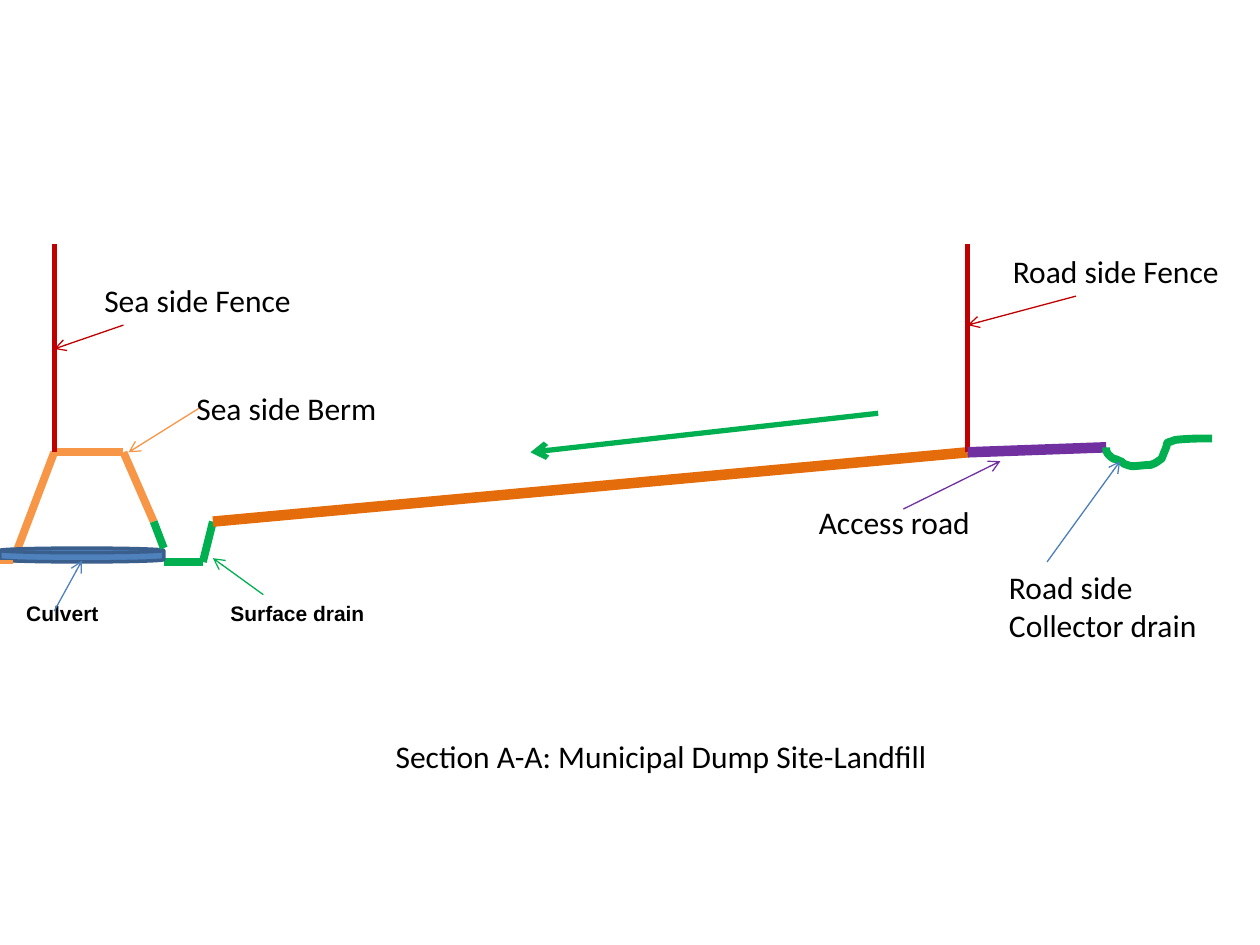
from lxml.etree import SubElement
from pptx import Presentation
from pptx.dml.color import RGBColor
from pptx.enum.shapes import MSO_CONNECTOR, MSO_SHAPE
from pptx.enum.text import MSO_ANCHOR, MSO_AUTO_SIZE, PP_ALIGN
from pptx.oxml.ns import qn
from pptx.util import Inches, Pt

# The slide is a grid of 100 columns by 75 rows
COLS, ROWS = 100, 75
CELL = Inches(0.1)

COLOR = {
    "berm": "F79646", "drain": "00B050", "fill": "E46C0A",
    "fence": "C00000", "road": "7030A0", "pipe": "4F81BD",
    "rim": "3A5F8C", "note": "4B7EBC", "text": "000000",
}

# Corners of the section, in columns and rows
SEA_TOP = (4.3, 35.9)
BERM_TOP = (9.8, 35.9)
BERM_TOE = (1, 44.6)
DRAIN_TOP = (12.2, 41.4)
DRAIN_BED = (16.1, 44.6)
SLOPE_TOE = (16.9, 41.4)
SLOPE_TOP = (76.8, 35.9)
ROAD_END = (87.8, 35.5)
FENCE_TOP = 19.4

# Bezier pieces of the collector drain: two handles and an end
BENDS = [
    ((87.8, 35.7), (87.8, 35.9), (88, 36.1)),
    ((88.5, 36.6), (88.4, 36.3), (88.9, 36.6)),
    ((89, 36.6), (89.1, 36.7), (89.2, 36.8)),
    ((89.4, 36.9), (89.8, 37), (89.8, 37)),
    ((90.3, 37), (90.8, 36.9), (91.3, 36.9)),
    ((91.4, 36.9), (91.5, 36.8), (91.6, 36.8)),
    ((91.8, 36.7), (92.2, 36.4), (92.2, 36.4)),
    ((92.2, 36.4), (92.6, 35.4), (92.6, 35.4)),
    ((92.6, 35.3), (92.6, 35.2), (92.7, 35.1)),
    ((92.9, 35.1), (93.2, 34.9), (93.4, 34.9)),
    ((94.6, 34.8), (95, 34.8), (96.2, 34.8)),
]


def cells(*nums):
    return [round(n * CELL) for n in nums]


def paint(line, color, width):
    line.color.rgb = RGBColor.from_string(COLOR[color])
    line.width = Pt(width)


def draw_line(slide, start, end, color, width=0.75, arrow=False):
    line = slide.shapes.add_connector(
        MSO_CONNECTOR.STRAIGHT, *cells(*start, *end))
    paint(line.line, color, width)
    props = line._element.spPr
    if arrow:
        SubElement(props.find(qn("a:ln")), qn("a:tailEnd"), type="arrow")
    SubElement(props, qn("a:effectLst"))


def put_text(shape, text, size=18, font="Calibri", bold=False, wrap=True):
    frame = shape.text_frame
    frame.text = text
    frame.word_wrap = wrap
    frame.auto_size = MSO_AUTO_SIZE.SHAPE_TO_FIT_TEXT
    frame.vertical_anchor = MSO_ANCHOR.TOP
    for para in frame.paragraphs:
        para.alignment = PP_ALIGN.LEFT
        face = para.font
        face.size, face.name, face.bold = Pt(size), font, bold
        face.color.rgb = RGBColor.from_string(COLOR["text"])


def add_label(slide, area, text, **style):
    put_text(slide.shapes.add_textbox(*cells(*area)), text, **style)


def set_title(slide, area, text):
    title = slide.shapes.title
    title.left, title.top, title.width, title.height = cells(*area)
    put_text(title, text)


def add_pipe(slide, area):
    pipe = slide.shapes.add_shape(
        MSO_SHAPE.FLOWCHART_MAGNETIC_DISK, *cells(*area))
    pipe.shadow.inherit = False
    pipe.fill.solid()
    pipe.fill.fore_color.rgb = RGBColor.from_string(COLOR["pipe"])
    paint(pipe.line, "rim", 2)


def bend(start, one, two, end, steps=6):
    for step in range(1, steps + 1):
        t = step / steps
        u = 1 - t
        yield tuple(u**3 * a + 3 * u * u * t * b + 3 * u * t * t * c + t**3 * d
                    for a, b, c, d in zip(start, one, two, end))


def add_curve(slide, start, bends, color, width):
    points, last = [], start
    for one, two, end in bends:
        points += bend(last, one, two, end)
        last = end
    form = slide.shapes.build_freeform(*cells(*start))
    form.add_line_segments([cells(*point) for point in points], close=False)
    curve = form.convert_to_shape()
    curve.shadow.inherit = False
    curve.fill.background()
    paint(curve.line, color, width)


def main():
    deck = Presentation()
    deck.slide_width, deck.slide_height = cells(COLS, ROWS)
    slide = deck.slides.add_slide(deck.slide_layouts[5])
    set_title(slide, (30.4, 58, 45.1, 4),
              "Section A-A: Municipal Dump Site-Landfill")

    # Berm, surface drain, landfill slope and sea side fence
    for start, end, color, width in [
        (BERM_TOP, SEA_TOP, "berm", 4.5),
        (SEA_TOP, BERM_TOE, "berm", 4.5),
        (BERM_TOP, DRAIN_TOP, "berm", 4.5),
        ((13, 44.6), DRAIN_BED, "drain", 4.5),
        (DRAIN_BED, SLOPE_TOE, "drain", 4.5),
        (SLOPE_TOE, SLOPE_TOP, "fill", 6),
        ((SEA_TOP[0], FENCE_TOP), SEA_TOP, "fence", 3),
    ]:
        draw_line(slide, start, end, color, width)

    # Culvert, then the parts in front of it
    add_pipe(slide, (0, 43.5, 13, 1.1))
    for start, end, color, width in [
        (BERM_TOE, (0, 44.6), "berm", 2.25),
        (SLOPE_TOP, (SLOPE_TOP[0], FENCE_TOP), "fence", 3),
        (DRAIN_TOP, (13, 43.5), "drain", 4.5),
        (SLOPE_TOP, ROAD_END, "road", 6),
    ]:
        draw_line(slide, start, end, color, width)
    add_curve(slide, ROAD_END, BENDS, "drain", 4.5)

    # Flow direction
    draw_line(slide, (69.7, 32.8), (42.1, 35.9), "drain", 3, arrow=True)

    # Labels
    small = {"size": 12, "font": "Arial", "bold": True, "wrap": False}
    for area, text, style in [
        ((7.3, 21.8, 18.4, 4), "Sea side Fence", {}),
        ((1.1, 47.2, 7.8, 3), "Culvert", small),
        ((17.3, 47.2, 12.8, 3), "Surface drain", small),
        ((79.4, 19.5, 18.6, 4), "Road side Fence", {}),
        ((64, 39.4, 14.7, 4), "Access road", {"wrap": False}),
        ((79.1, 44.6, 17.4, 7.1), "Road side\nCollector drain", {}),
        ((14.6, 30.4, 16.5, 4), "Sea side Berm", {"wrap": False}),
    ]:
        add_label(slide, area, text, **style)

    # Arrows from labels to parts
    for start, end, color in [
        ((20.9, 47.2), (16.9, 44.3), "drain"),
        ((4.3, 48.5), (6.5, 44.5), "pipe"),
        ((9.8, 25.8), (4.3, 27.7), "fence"),
        ((85.4, 23.5), (76.8, 25.8), "fence"),
        ((71.7, 40.4), (79.4, 36.6), "road"),
        ((83.1, 44.6), (88.9, 36.6), "note"),
        ((15.8, 32.4), (10.2, 35.9), "berm"),
    ]:
        draw_line(slide, start, end, color, arrow=True)

    deck.save("out.pptx")


if __name__ == "__main__":
    main()
